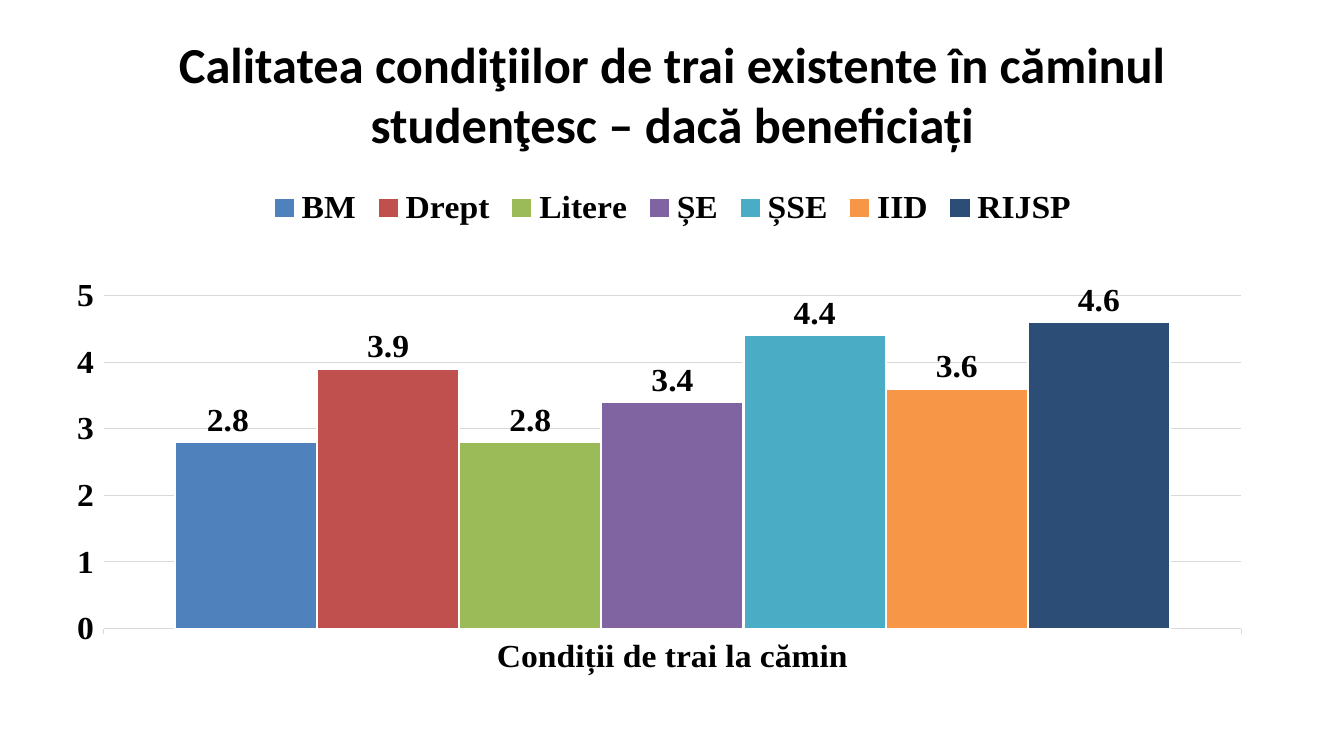
from typing import NamedTuple

from lxml import etree
from pptx import Presentation
from pptx.chart.data import CategoryChartData
from pptx.dml.color import RGBColor
from pptx.enum.chart import XL_CHART_TYPE, XL_LABEL_POSITION as LabelPos
from pptx.enum.chart import XL_LEGEND_POSITION as LegendPos, XL_TICK_MARK as Tick
from pptx.enum.text import MSO_ANCHOR, PP_ALIGN
from pptx.oxml.ns import qn
from pptx.util import Inches, Pt


class Faculty(NamedTuple):
    name: str
    score: float
    color: str


FACULTIES = [
    Faculty("BM", 2.8, "4F81BD"),
    Faculty("Drept", 3.9, "C0504D"),
    Faculty("Litere", 2.8, "9BBB59"),
    Faculty("ȘE", 3.4, "8064A2"),
    Faculty("ȘSE", 4.4, "4BACC6"),
    Faculty("IID", 3.6, "F79646"),
    Faculty("RIJSP", 4.6, "2C4D75"),
]
GRID = "D9D9D9"


def rgb(color: str) -> RGBColor:
    return RGBColor.from_string(color)


def set_font(font, size: float, name: str = "Times New Roman") -> None:
    font.name, font.size, font.bold = name, Pt(size), True
    font.color.rgb = rgb("000000")


def set_line(line, color: str, width: float) -> None:
    line.color.rgb = rgb(color)
    line.width = Pt(width)


def add_layout(parent, index: int, **values) -> None:
    """Insert a manual chart layout as the given child of parent."""
    for old in parent.findall(qn("c:layout")):
        parent.remove(old)
    layout = etree.Element(qn("c:layout"))
    manual = etree.SubElement(layout, qn("c:manualLayout"))
    for tag, value in values.items():
        etree.SubElement(manual, qn(f"c:{tag}")).set("val", str(value))
    parent.insert(index, layout)


def add_title(s, text: str) -> None:
    tf = s.shapes.add_textbox(Inches(0.67), Inches(0.3), Inches(12), Inches(1.25)).text_frame
    tf.word_wrap = True
    tf.vertical_anchor = MSO_ANCHOR.MIDDLE
    p = tf.paragraphs[0]
    p.alignment = PP_ALIGN.CENTER
    r = p.add_run()
    r.text = text
    set_font(r.font, 36, "Calibri")


def add_score_chart(s) -> None:
    data = CategoryChartData()
    data.categories = ["Condiții de trai la cămin"]
    for faculty in FACULTIES:
        data.add_series(faculty.name, [faculty.score])
    chart = s.shapes.add_chart(XL_CHART_TYPE.COLUMN_CLUSTERED, Inches(0.67), Inches(1.75),
                               Inches(12), Inches(4.95), data).chart
    chart.has_title = False
    set_font(chart.font, 24)

    # Legend
    chart.has_legend = True
    chart.legend.position = LegendPos.TOP
    chart.legend.include_in_layout = False
    set_font(chart.legend.font, 24)

    # Axes
    cat, val = chart.category_axis, chart.value_axis
    for axis in (cat, val):
        axis.major_tick_mark = Tick.OUTSIDE
        axis.minor_tick_mark = Tick.NONE
        set_font(axis.tick_labels.font, 24)
    set_line(cat.format.line, GRID, 0.75)
    val.minimum_scale, val.maximum_scale, val.major_unit = 0, 5, 1
    val.format.line.fill.background()
    set_line(val.major_gridlines.format.line, GRID, 0.75)

    # Columns and their values
    plot = chart.plots[0]
    plot.gap_width, plot.overlap, plot.vary_by_categories = 100, 0, False
    for series, faculty in zip(plot.series, FACULTIES):
        series.format.fill.solid()
        series.format.fill.fore_color.rgb = rgb(faculty.color)
        set_line(series.format.line, "FFFFFF", 1.5)
        labels = series.data_labels
        labels.show_value = True
        labels.position = LabelPos.OUTSIDE_END
        set_font(labels.font, 24)

    # The first value sits a little left of its column's centre
    first = plot.series[0]
    label = first.points[0].data_label
    set_font(label.font, 24)
    label.position = LabelPos.OUTSIDE_END
    add_layout(first.data_labels._element.find(qn("c:dLbl")), 1, x=-0.015, y=0)

    # Plot area
    add_layout(chart._chartSpace.chart.plotArea, 0, layoutTarget="inner", xMode="edge",
               yMode="edge", x=0.03, y=0.25, w=0.94, h=0.7)


def main() -> None:
    prs = Presentation()
    prs.slide_width, prs.slide_height = Inches(13.33), Inches(7.5)
    s = prs.slides.add_slide(prs.slide_layouts[6])
    add_title(s, "Calitatea condiţiilor de trai existente în căminul studenţesc – dacă beneficiați")
    add_score_chart(s)
    prs.save("out.pptx")


if __name__ == "__main__":
    main()
